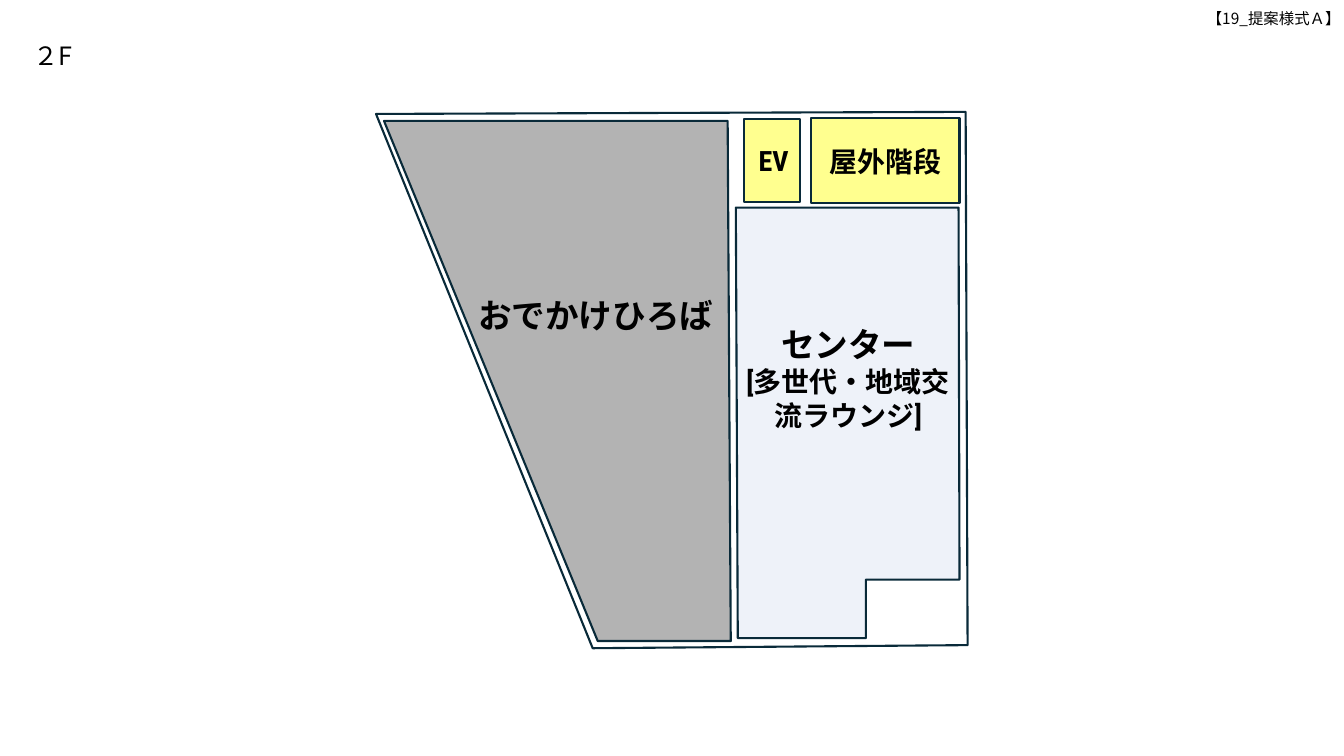
import pptx
import pptx.dml.color
import pptx.enum.shapes
import pptx.enum.text
import pptx.oxml
import pptx.oxml.ns
import pptx.util

Pt = pptx.util.Pt
RGBColor = pptx.dml.color.RGBColor
Align = pptx.enum.text.PP_ALIGN
Anchor = pptx.enum.text.MSO_ANCHOR

BLACK = RGBColor(0x00, 0x00, 0x00)
NAVY = RGBColor(0x09, 0x2A, 0x39)
PALE_BLUE = RGBColor(0xDA, 0xE3, 0xF3)
GRAY = RGBColor(0x52, 0x52, 0x52)
YELLOW = RGBColor(0xFF, 0xFF, 0x00)
LABEL_FONT = "Roboto Condensed"
PAGE_FONT = "Noto Sans CJK JP"


def write(para, text, size, font=LABEL_FONT, bold=True, align=Align.CENTER):
    para.alignment = align
    span = para.add_run()
    span.text = text
    span.font.size = Pt(size)
    span.font.bold = bold
    span.font.color.rgb = BLACK
    span.font.name = font
    east_asian = pptx.oxml.parse_xml(f'<a:ea {pptx.oxml.ns.nsdecls("a")} typeface="{font}"/>')
    span.font._element.append(east_asian)


def style_area(shape, color):
    shape.shadow.inherit = False
    shape.line.color.rgb = NAVY
    shape.line.width = Pt(1.5)
    if color is None:
        shape.fill.background()
        return
    shape.fill.solid()
    shape.fill.fore_color.rgb = color
    alpha = pptx.oxml.parse_xml(f'<a:alpha {pptx.oxml.ns.nsdecls("a")} val="44000"/>')
    shape._element.spPr.find(".//" + pptx.oxml.ns.qn("a:srgbClr")).append(alpha)


deck = pptx.Presentation()
deck.slide_width = Pt(960)
deck.slide_height = Pt(540)
page = deck.slides.add_slide(deck.slide_layouts[5])

title = page.shapes.title
title.left, title.top, title.width, title.height = Pt(16.6), Pt(25.2), Pt(49.7), Pt(28.8)
title.text_frame.word_wrap = False
title.text_frame.auto_size = pptx.enum.text.MSO_AUTO_SIZE.NONE
title.text_frame.vertical_anchor = Anchor.TOP
write(title.text_frame.paragraphs[0], "２F", 18, font=PAGE_FONT, bold=False, align=Align.LEFT)

floor_plan = page.shapes.add_group_shape()

outlines = [
    (PALE_BLUE, [(525.6, 148.3), (527, 455.8), (618.5, 455.8), (618.5, 414),
                 (685.4, 414), (684.7, 148.3)]),
    (GRAY, [(519.8, 86.4), (522, 457.9), (427, 457.9), (274.3, 86.4)]),
    (None, [(268.6, 81.4), (423.4, 463), (691.2, 460.8), (689.8, 79.9)]),
]
for color, corners in outlines:
    points = [(Pt(x), Pt(y)) for x, y in corners]
    builder = floor_plan.shapes.build_freeform(*points[0])
    builder.add_line_segments(points[1:], close=True)
    style_area(builder.convert_to_shape(), color)

for left, top, width, height in [(531.4, 85, 40.3, 59), (579.6, 84.4, 105.8, 60.5)]:
    room = floor_plan.shapes.add_shape(
        pptx.enum.shapes.MSO_SHAPE.RECTANGLE, Pt(left), Pt(top), Pt(width), Pt(height))
    style_area(room, YELLOW)

labels = [
    (529.9, 100.8, 45.4, 28.1, [("EV", 20)]),
    (582.5, 95, 100.1, 41, [("屋外階段", 20)]),
    (324, 178.6, 203, 92.2, [("おでかけひろば", 24)]),
    (524.2, 176.4, 163.4, 187.2, [("センター", 24), ("[多世代・地域交流ラウンジ]", 20)]),
]
for left, top, width, height, lines in labels:
    box = floor_plan.shapes.add_textbox(Pt(left), Pt(top), Pt(width), Pt(height))
    frame = box.text_frame
    frame.word_wrap = True
    frame.vertical_anchor = Anchor.MIDDLE
    for index, (text, size) in enumerate(lines):
        para = frame.add_paragraph() if index else frame.paragraphs[0]
        write(para, text, size)

form_box = page.shapes.add_textbox(Pt(842.4), Pt(2.9), Pt(122.4), Pt(20.9))
form_box.text_frame.word_wrap = True
write(form_box.text_frame.paragraphs[0], "【19_提案様式Ａ】", 11,
      font=PAGE_FONT, bold=False, align=Align.RIGHT)

deck.save("out.pptx")
